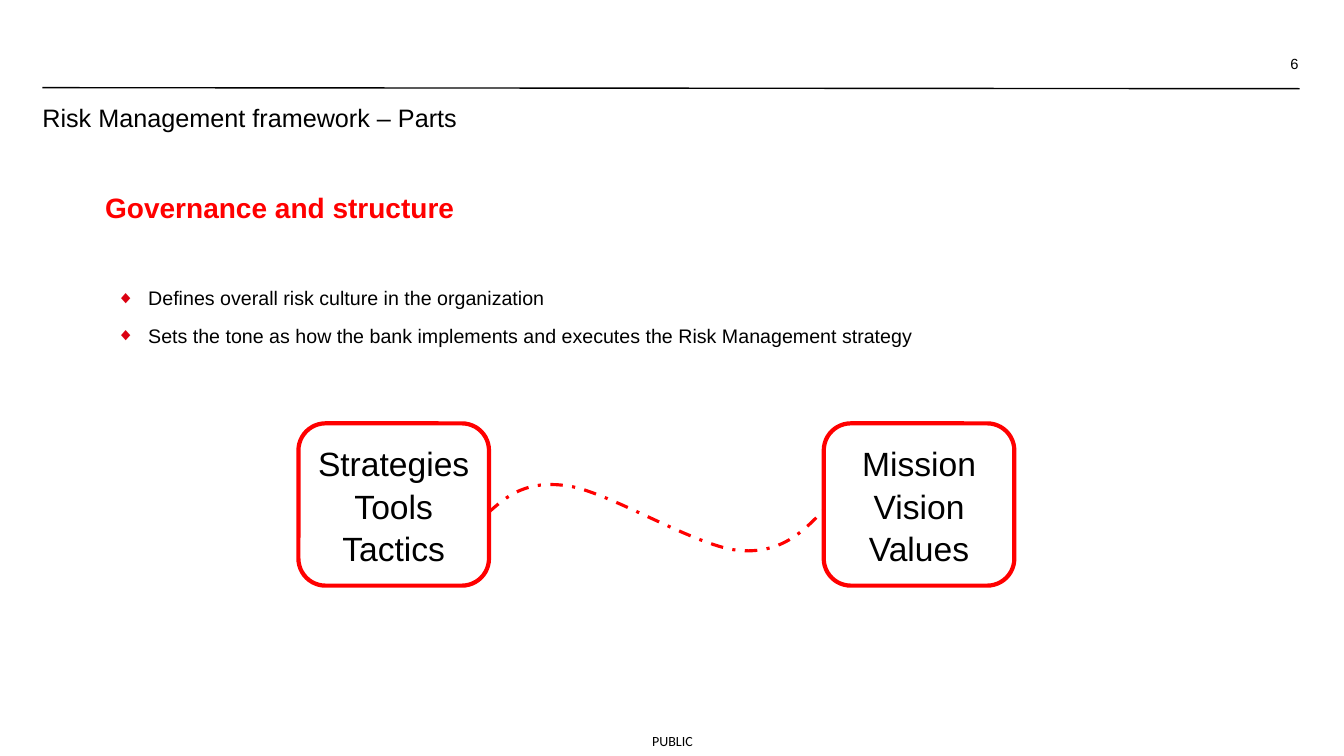
from lxml import etree
from pptx import Presentation
from pptx.dml.color import RGBColor
from pptx.enum.dml import MSO_LINE
from pptx.enum.shapes import MSO_CONNECTOR, MSO_SHAPE
from pptx.enum.text import MSO_ANCHOR, MSO_AUTO_SIZE, PP_ALIGN
from pptx.oxml.ns import qn
from pptx.util import Inches, Pt

LEFT, MID, RIGHT = PP_ALIGN.LEFT, PP_ALIGN.CENTER, PP_ALIGN.RIGHT
TOP, CENTRE = MSO_ANCHOR.TOP, MSO_ANCHOR.MIDDLE
FIXED = MSO_AUTO_SIZE.NONE
ROUND, LINE = MSO_SHAPE.ROUNDED_RECTANGLE, MSO_CONNECTOR.STRAIGHT
DASH = MSO_LINE.DASH_DOT

HEX = {"ink": "000000", "red": "FF0000", "mark": "DB0011"}


def tint(name):
    return RGBColor.from_string(HEX[name])


def curve(start, arcs, steps=24):
    """Points along a chain of cubic arcs."""
    points = [start]
    for a, b, end in arcs:
        for i in range(1, steps + 1):
            t = i / steps
            u = 1 - t
            points.append(tuple(
                u**3 * p + 3 * u * u * t * q + 3 * u * t * t * r + t**3 * s
                for p, q, r, s in zip(start, a, b, end)))
        start = end
    return points


class Deck:
    font = "Arial"

    def __init__(self):
        self.prs = Presentation()
        self.prs.slide_width = Inches(13.33)
        self.prs.slide_height = Inches(7.5)
        self.slide = self.prs.slides.add_slide(self.prs.slide_layouts[1])
        self.shapes = self.slide.shapes

    def place(self, shape, box):
        shape.left, shape.top, shape.width, shape.height = map(Inches, box)

    def fill_text(self, shape, lines, size, color="ink", bold=False,
                  align=LEFT, anchor=TOP, pad=(0.1, 0.05), gap=0, lead=1.0,
                  font=None, bullet=None):
        frame = shape.text_frame
        frame.word_wrap = True
        frame.auto_size = FIXED
        frame.vertical_anchor = anchor
        frame.margin_left = frame.margin_right = Inches(pad[0])
        frame.margin_top = frame.margin_bottom = Inches(pad[1])
        for i, line in enumerate(lines):
            par = frame.add_paragraph() if i else frame.paragraphs[0]
            par.alignment = align
            par.line_spacing = lead
            par.space_before = Pt(gap if i else 0)
            par.space_after = Pt(0)
            if bullet:
                self.mark(par, bullet)
            run = par.add_run()
            run.text = line
            run.font.name = font or self.font
            run.font.size = Pt(size)
            run.font.bold = bold
            run.font.color.rgb = tint(color)

    def mark(self, par, sign):
        props = par._p.get_or_add_pPr()
        props.set("marL", str(Inches(0.31)))
        props.set("indent", str(-Inches(0.31)))
        hue = etree.SubElement(props, qn("a:buClr"))
        etree.SubElement(hue, qn("a:srgbClr"), val=HEX["mark"])
        etree.SubElement(props, qn("a:buSzPct"), val="90000")
        etree.SubElement(props, qn("a:buFont"), typeface=self.font)
        etree.SubElement(props, qn("a:buChar"), char=sign)

    def holder(self, index, box, lines, size, **style):
        shape = self.slide.placeholders[index]
        self.place(shape, box)
        self.fill_text(shape, lines, size, **style)

    def label(self, box, text, size, **style):
        shape = self.shapes.add_textbox(*map(Inches, box))
        self.fill_text(shape, [text], size, **style)

    def rule(self, *ends):
        line = self.shapes.add_connector(LINE, *map(Inches, ends))
        line.line.color.rgb = tint("ink")
        line.line.width = Pt(1)
        etree.SubElement(line._element.spPr, qn("a:effectLst"))

    def edge(self, shape, width):
        shape.shadow.inherit = False
        shape.fill.background()
        shape.line.color.rgb = tint("red")
        shape.line.width = Pt(width)

    def card(self, box, lines):
        shape = self.shapes.add_shape(ROUND, *map(Inches, box))
        shape.adjustments[0] = 0.167
        self.edge(shape, 3)
        self.fill_text(shape, lines, 24, align=MID, anchor=CENTRE, lead=1.06)

    def wave(self, points):
        spots = [(Inches(x), Inches(y)) for x, y in points]
        pen = self.shapes.build_freeform(*spots[0])
        pen.add_line_segments(spots[1:], close=False)
        shape = pen.convert_to_shape()
        self.edge(shape, 2.25)
        shape.line.dash_style = DASH


def main():
    deck = Deck()

    # Header and footer
    deck.rule(0.42, 0.87, 12.89, 0.88)
    deck.label((6.32, 7.27, 0.7, 0.17), "PUBLIC", 10, font="Calibri",
               align=MID, anchor=CENTRE, pad=(0, 0))
    deck.holder(0, (0.42, 0.99, 12.47, 0.35),
                ["Risk Management framework – Parts"], 18,
                anchor=CENTRE, pad=(0, 0))
    deck.label((9.91, 0.54, 2.97, 0.33), "6", 10.5, align=RIGHT, pad=(0, 0))

    # Heading and list
    deck.label((0.57, 1.84, 4.41, 0.43), "Governance and structure", 20,
               color="red", bold=True, align=MID)
    deck.holder(1, (1.06, 2.79, 8.5, 0.7), [
        "Defines overall risk culture in the organization",
        "Sets the tone as how the bank implements and executes the "
        "Risk Management strategy",
    ], 14, gap=10, bullet="◆")

    # Linked cards
    cards = {2.96: ["Strategies", "Tools", "Tactics"],
             8.17: ["Mission", "Vision", "Values"]}
    for left, lines in cards.items():
        deck.card((left, 4.2, 1.89, 1.61), lines)
    deck.wave(curve((4.85, 5.08), [
        ((5.03, 4.92), (5.22, 4.76), (5.63, 4.82)),
        ((6.04, 4.88), (6.9, 5.42), (7.32, 5.46)),
        ((7.74, 5.5), (7.96, 5.28), (8.17, 5.06)),
    ]))

    deck.prs.save("out.pptx")


if __name__ == "__main__":
    main()
